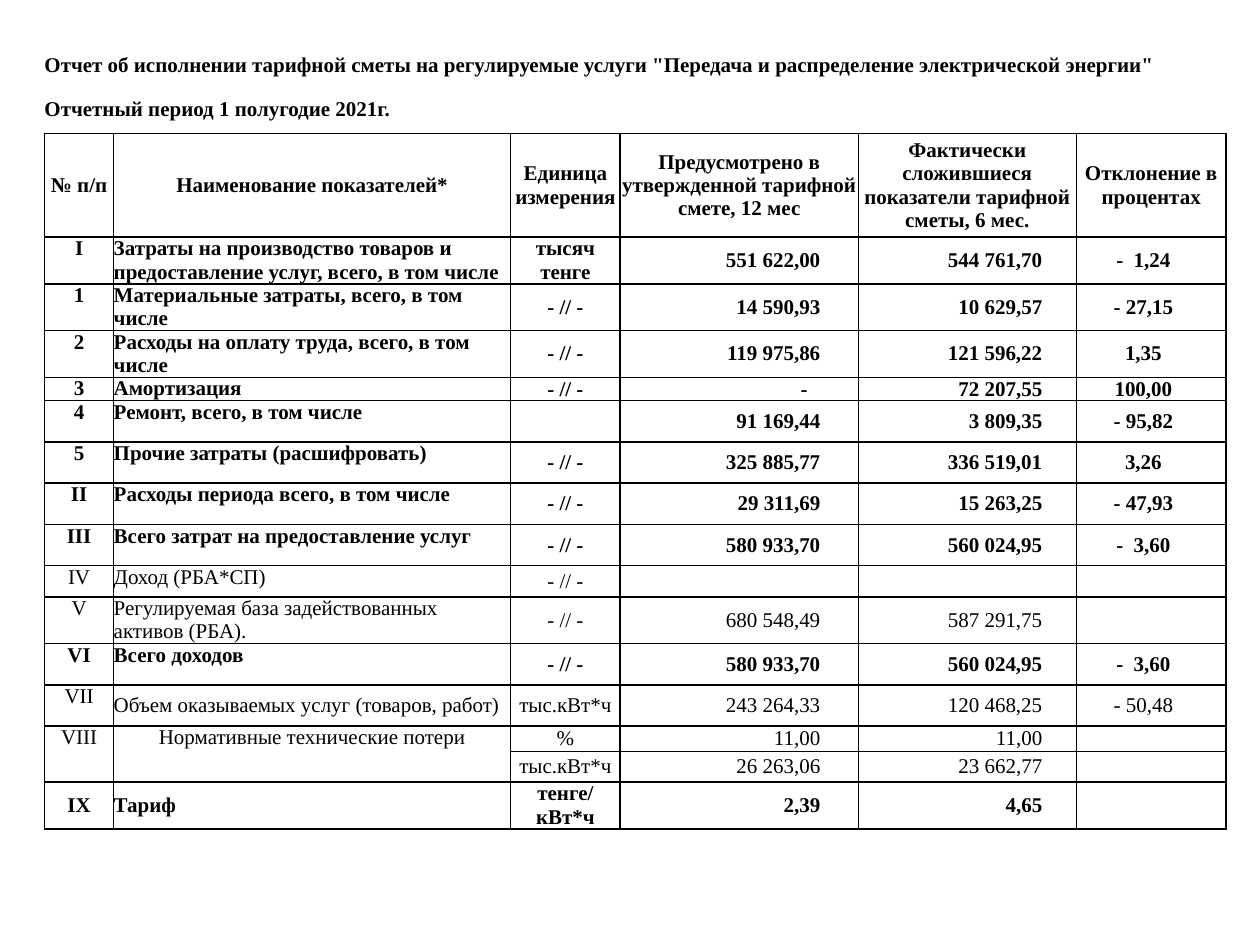
from lxml import etree
from pptx import Presentation
from pptx.dml.color import RGBColor
from pptx.enum.text import MSO_ANCHOR, PP_ALIGN
from pptx.oxml.ns import qn
from pptx.util import Pt

LEFT, CENTER, RIGHT = PP_ALIGN.LEFT, PP_ALIGN.CENTER, PP_ALIGN.RIGHT
TOP, MIDDLE = MSO_ANCHOR.TOP, MSO_ANCHOR.MIDDLE
FONT = "Times New Roman"
BLACK, WHITE = "000000", "FFFFFF"

column_widths = [39.6, 226.8, 62.64, 136.08, 124.56, 85.68]
column_aligns = [CENTER, LEFT, CENTER, RIGHT, RIGHT, CENTER]
right_margins = [0, 0, 0, 21.7, 19.4, 9]
ditto = "- // -"
headings = [
    (23, 'Отчет об исполнении тарифной сметы на регулируемые услуги "Передача и распределение электрической энергии"', 5),
    (27.4, "Отчетный период 1 полугодие 2021г.", 3),
]
header_height = 59.2
header = ["№ п/п", "Наименование показателей*", "Единица измерения",
          "Предусмотрено в утвержденной тарифной смете, 12 мес",
          "Фактически сложившиеся показатели тарифной сметы, 6 мес.", "Отклонение в процентах"]
indicators = [
    (26.6, ["I", "Затраты на производство товаров и предоставление услуг, всего, в том числе",
            "тысяч тенге", "551 622,00", "544 761,70", "-  1,24"]),
    (26.6, ["1", "Материальные затраты, всего, в том числе", ditto, "14 590,93", "10 629,57", "- 27,15"]),
    (26.6, ["2", "Расходы на оплату труда, всего, в том числе", ditto, "119 975,86", "121 596,22", "1,35"]),
    (13.3, ["3", "Амортизация", ditto, "-", "72 207,55", "100,00"]),
    (23.6, ["4", "Ремонт, всего, в том числе", "", "91 169,44", "3 809,35", "- 95,82"]),
    (23.6, ["5", "Прочие затраты (расшифровать)", ditto, "325 885,77", "336 519,01", "3,26"]),
    (23.6, ["II", "Расходы периода всего, в том числе", ditto, "29 311,69", "15 263,25", "- 47,93"]),
    (23.6, ["III", "Всего затрат на предоставление услуг", ditto, "580 933,70", "560 024,95", "-  3,60"]),
    (17.8, ["IV", "Доход (РБА*СП)", ditto, "", "", ""]),
    (26.6, ["V", "Регулируемая база задействованных активов (РБА).", ditto, "680 548,49", "587 291,75", ""]),
    (23.6, ["VI", "Всего доходов", ditto, "580 933,70", "560 024,95", "-  3,60"]),
    (23.6, ["VII", "Объем оказываемых услуг (товаров, работ)", "тыс.кВт*ч", "243 264,33", "120 468,25", "- 50,48"]),
    (14.3, ["VIII", "Нормативные технические потери", "%", "11,00", "11,00", ""]),
    (17.4, ["", "", "тыс.кВт*ч", "26 263,06", "23 662,77", ""]),
    (26.6, ["IX", "Тариф", "тенге/ кВт*ч", "2,39", "4,65", ""]),
]
regular_numbers = {"IV", "V", "VII", "VIII", ""}


def color(value):
    return RGBColor.from_string(value)


def write(cell, text, align, anchor, bold, right_margin=0):
    cell.vertical_anchor = anchor
    cell.margin_right = Pt(right_margin)
    paragraph = cell.text_frame.paragraphs[0]
    paragraph.alignment = align
    if text:
        run = paragraph.add_run()
        run.text = text
        run.font.name = FONT
        run.font.size = Pt(12)
        run.font.bold = bold
        run.font.color.rgb = color(BLACK)


prs = Presentation()
prs.slide_width, prs.slide_height = Pt(720), Pt(540)
slide = prs.slides.add_slide(prs.slide_layouts[6])

row_heights = [height for height, _, _ in headings] + [header_height] + [height for height, _ in indicators]
report = slide.shapes.add_table(len(row_heights), len(column_widths), Pt(25.4), Pt(26),
                                Pt(sum(column_widths)), Pt(sum(row_heights))).table
report.first_row = report.horz_banding = False
for column, width in zip(report.columns, column_widths):
    column.width = Pt(width)
for row, height in zip(report.rows, row_heights):
    row.height = Pt(height)

for r, row in enumerate(report.rows):
    for cell in row.cells:
        cell.margin_left = cell.margin_right = cell.margin_top = cell.margin_bottom = 0
        cell_properties = cell._tc.get_or_add_tcPr()
        for side in ("lnL", "lnR", "lnT", "lnB"):
            white_edge = r == 0 or (r == 1 and side != "lnB")
            border = etree.SubElement(cell_properties, qn("a:" + side), w=str(Pt(1)))
            border_fill = etree.SubElement(border, qn("a:solidFill"))
            etree.SubElement(border_fill, qn("a:srgbClr"), val=WHITE if white_edge else BLACK)
        cell.fill.solid()
        cell.fill.fore_color.rgb = color(WHITE)
        end_properties = cell.text_frame.paragraphs[0]._p.get_or_add_endParaRPr()
        end_properties.set("sz", "1200")

for r, (_, heading, last_column) in enumerate(headings):
    report.cell(r, 0).merge(report.cell(r, last_column))
    write(report.cell(r, 0), heading, LEFT, MIDDLE, True)

header_row = len(headings)
for c, label in enumerate(header):
    write(report.cell(header_row, c), label, CENTER, MIDDLE, True)

for r, (_, values) in enumerate(indicators, header_row + 1):
    number = values[0]
    if number == "VIII":
        for c in (0, 1):
            report.cell(r, c).merge(report.cell(r + 1, c))
    for c, value in enumerate(values):
        align = CENTER if number == "VIII" and c == 1 else column_aligns[c]
        at_top = c == 0 and number != "IX" or c == 1 and number not in ("VII", "IX")
        right_margin = 29 if value == "-" else right_margins[c]
        write(report.cell(r, c), value, align, TOP if at_top else MIDDLE,
              number not in regular_numbers, right_margin)

prs.save("out.pptx")
